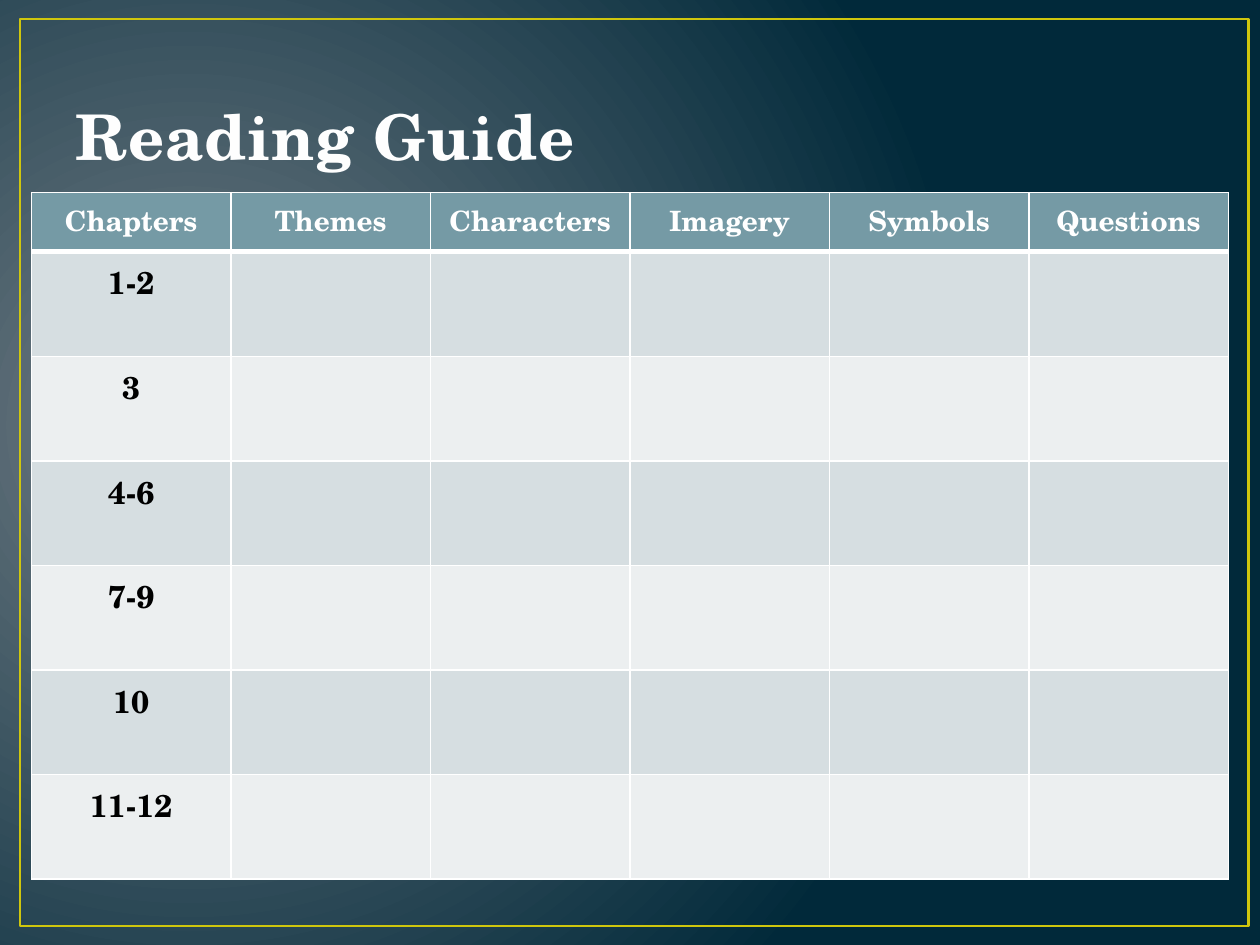
from lxml.etree import SubElement as Sub
from pptx import Presentation
from pptx.dml.color import RGBColor as RGB
from pptx.enum.shapes import MSO_SHAPE as Geo
from pptx.enum.text import MSO_ANCHOR as Anchor, PP_ALIGN as Align
from pptx.oxml.ns import qn
from pptx.util import Pt

FONT = "TeX Gyre Schola"
GLOW = RGB(0x71, 0x7C, 0x84)
NAVY = RGB(0x01, 0x29, 0x3A)
GOLD = RGB(0xCF, 0xC6, 0x0D)
PALE = RGB(0xFE, 0xFE, 0xFE)
EDGE = RGB(0x38, 0x4F, 0x55)
WHITE = RGB(0xFF, 0xFF, 0xFF)
BLACK = RGB(0, 0, 0)
TEAL = RGB(0x75, 0x9A, 0xA5)
BANDS = [RGB(0xD6, 0xDE, 0xE1), RGB(0xEC, 0xEF, 0xF0)]

HEADS = ["Chapters", "Themes", "Characters", "Imagery", "Symbols", "Questions"]
PARTS = ["1-2", "3", "4-6", "7-9", "10", "11-12"]


def paint(slide):
    """Radial background glow from the left."""
    fill = slide.background.fill
    fill.gradient()
    for stop, pos, tint in zip(fill.gradient_stops, (0, 1), (GLOW, NAVY)):
        stop.position = pos
        stop.color.rgb = tint
    grad = slide.element.find(".//" + qn("a:gradFill"))
    grad.remove(grad.find(qn("a:lin")))
    ring = Sub(grad, qn("a:path"), path="circle")
    Sub(ring, qn("a:fillToRect"), l="15000", t="50000", r="85000", b="60000")


def add_frame(slide):
    box = slide.shapes.add_shape(Geo.RECTANGLE, Pt(11.5), Pt(10.8), Pt(702), Pt(518.4))
    box.shadow.inherit = False
    box.fill.background()
    box.line.color.rgb = GOLD
    box.line.width = Pt(1.5)


def add_run(para, text, size, tint):
    run = para.add_run()
    run.text = text
    font = run.font
    font.name, font.size, font.bold = FONT, Pt(size), True
    font.color.rgb = tint
    return run


def add_line(props, tag, tint, width, spot):
    """Insert a solid line at its place among the properties."""
    line = props.makeelement(qn(tag), {"w": str(Pt(width))})
    Sub(Sub(line, qn("a:solidFill")), qn("a:srgbClr"), val=str(tint))
    props.insert(spot, line)


def add_title(slide):
    box = slide.shapes.add_textbox(Pt(36), Pt(12.24), Pt(648), Pt(90))
    frame = box.text_frame
    frame.word_wrap = True
    frame.vertical_anchor = Anchor.BOTTOM
    run = add_run(frame.paragraphs[0], "Reading Guide", 36, PALE)
    props = run.font._element
    props.set("spc", "50")
    add_line(props, "a:ln", EDGE, 1.05, 0)


def set_cell(cell, text, size, tint, fill, top, base):
    cell.fill.solid()
    cell.fill.fore_color.rgb = fill
    props = cell._tc.get_or_add_tcPr()
    for spot, (side, width) in enumerate(zip("LRTB", (1, 1, top, base))):
        add_line(props, "a:ln" + side, WHITE, width, spot)
    if text:
        para = cell.text_frame.paragraphs[0]
        para.alignment = Align.CENTER
        add_run(para, text, size, tint)


def add_grid(slide):
    rows, cols = len(PARTS) + 1, len(HEADS)
    table = slide.shapes.add_table(
        rows, cols, Pt(18), Pt(110), Pt(684), Pt(392.4)).table
    for col in table.columns:
        col.width = Pt(114)
    for i, row in enumerate(table.rows):
        row.height = Pt(59.76 if i else 33.84)

    # Header row, with a thick rule below it
    for i, head in enumerate(HEADS):
        set_cell(table.cell(0, i), head, 16, WHITE, TEAL, 1, 3)

    # Banded rows, labelled in the first column
    for i, part in enumerate(PARTS):
        for j in range(cols):
            set_cell(table.cell(i + 1, j), "" if j else part, 18, BLACK,
                     BANDS[i % 2], 1 if i else 3, 1)


def main():
    deck = Presentation()
    deck.slide_width, deck.slide_height = Pt(720), Pt(540)
    slide = deck.slides.add_slide(deck.slide_layouts[6])
    paint(slide)
    add_frame(slide)
    add_title(slide)
    add_grid(slide)
    deck.save("out.pptx")


if __name__ == "__main__":
    main()
